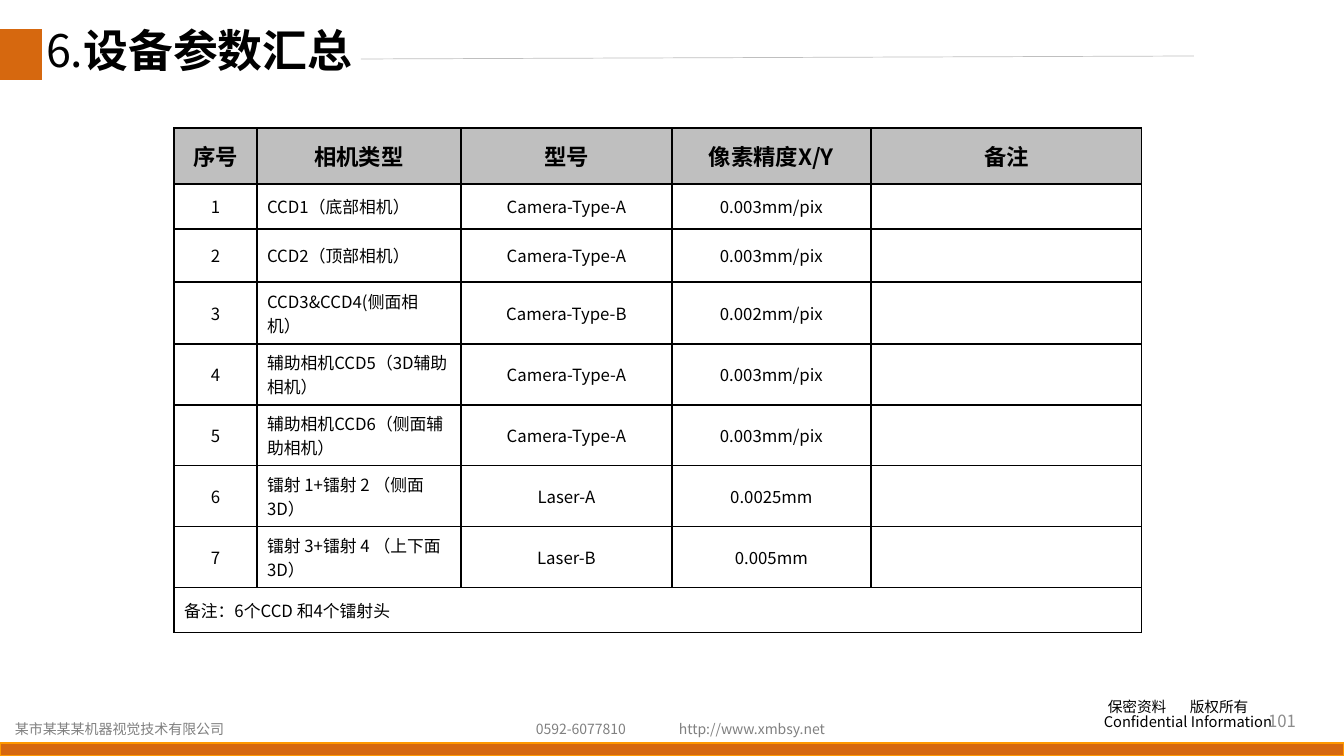
from pptx import Presentation
from pptx.dml.color import RGBColor
from pptx.enum.shapes import MSO_CONNECTOR, MSO_SHAPE
from pptx.enum.text import MSO_ANCHOR, MSO_AUTO_SIZE, PP_ALIGN
from pptx.oxml.ns import qn
from pptx.util import Pt
from lxml import etree

RECT = MSO_SHAPE.RECTANGLE
STRAIGHT = MSO_CONNECTOR.STRAIGHT
TOP, MIDDLE = MSO_ANCHOR.TOP, MSO_ANCHOR.MIDDLE
NO_FIT = MSO_AUTO_SIZE.NONE
LEFT, CENTER, RIGHT = PP_ALIGN.LEFT, PP_ALIGN.CENTER, PP_ALIGN.RIGHT

SCALE = 914400 / 100.8
FONT = "Noto Sans CJK SC"
BLACK, GREY, ORANGE = "000000", "808080", "D6680F"

COLUMNS = [83, 204, 211, 199, 271]
ROWS = [56, 45, 53, 62, 61, 61, 61, 61, 45]
HEADERS = ["序号", "相机类型", "型号", "像素精度X/Y", "备注"]
DEVICES = [
    ["CCD1（底部相机）", "Camera-Type-A", "0.003mm/pix"],
    ["CCD2（顶部相机）", "Camera-Type-A", "0.003mm/pix"],
    ["CCD3&CCD4(侧面相机）", "Camera-Type-B", "0.002mm/pix"],
    ["辅助相机CCD5（3D辅助相机）", "Camera-Type-A", "0.003mm/pix"],
    ["辅助相机CCD6（侧面辅助相机）", "Camera-Type-A", "0.003mm/pix"],
    ["镭射 1+镭射 2 （侧面3D）", "Laser-A", "0.0025mm"],
    ["镭射 3+镭射 4 （上下面3D）", "Laser-B", "0.005mm"],
]
REMARK = "备注：6个CCD 和4个镭射头"


def px(n):
    return round(n * SCALE)


def color(value):
    return RGBColor.from_string(value)


def format_run(r, size, fill=BLACK, bold=False):
    r.font.size = Pt(size)
    r.font.bold = bold
    r.font.name = FONT
    r.font.color.rgb = color(fill)
    rPr = r.font._element
    ea = etree.Element(qn("a:ea"), typeface=FONT)
    rPr.find(qn("a:latin")).addnext(ea)


def add_text(s, x, y, w, h, text, size, fill=BLACK, align=LEFT, anchor=TOP, wrap=False):
    sp = s.shapes.add_textbox(px(x), px(y), px(w), px(h))
    tf = sp.text_frame
    tf.word_wrap = wrap
    tf.vertical_anchor = anchor
    tf.text = text
    for p in tf.paragraphs:
        p.alignment = align
        for r in p.runs:
            format_run(r, size, fill)
    return tf


def add_bar(s, x, y, w, h, line=None):
    sp = s.shapes.add_shape(RECT, px(x), px(y), px(w), px(h))
    sp.shadow.inherit = False
    sp.fill.solid()
    sp.fill.fore_color.rgb = color(ORANGE)
    if line:
        sp.line.color.rgb = color(line)
        sp.line.width = Pt(1)
    else:
        sp.line.fill.background()


def add_header(s, x, y, w, h):
    add_bar(s, x, y, 42, h)
    rule = s.shapes.add_connector(STRAIGHT, px(x + 361), px(y + 30), px(x + w), px(y + 27))
    rule.line.color.rgb = color("BFBFBF")
    rule.line.width = Pt(0.5)
    etree.SubElement(rule._element.spPr, qn("a:effectLst"))

    title = s.shapes.title
    title.left, title.top, title.width, title.height = px(x + 36), px(y), px(384), px(72)
    tf = title.text_frame
    tf.auto_size = NO_FIT
    tf.vertical_anchor = TOP
    tf.margin_top = 0
    p = tf.paragraphs[0]
    p.alignment = LEFT
    p.line_spacing = 0.9
    for text, bold in [("6.", False), ("设备参数汇总", True)]:
        r = p.add_run()
        r.text = text
        format_run(r, 32, bold=bold)


def add_borders(cell):
    tcPr = cell._tc.get_or_add_tcPr()
    for i, side in enumerate(["lnL", "lnR", "lnT", "lnB"]):
        ln = etree.Element(qn(f"a:{side}"), w=str(Pt(1)))
        fill = etree.SubElement(ln, qn("a:solidFill"))
        etree.SubElement(fill, qn("a:srgbClr"), val=BLACK)
        tcPr.insert(i, ln)


def fill_cell(cell, text, size, align, bold=False, fill=None):
    cell.vertical_anchor = MIDDLE
    if fill:
        cell.fill.solid()
        cell.fill.fore_color.rgb = color(fill)
    else:
        cell.fill.background()
    add_borders(cell)
    p = cell.text_frame.paragraphs[0]
    p.text = text
    p.alignment = align
    for r in p.runs:
        format_run(r, size, bold=bold)
    if not text:
        etree.SubElement(p._p, qn("a:endParaRPr"), sz=str(size * 100))


def add_device_table(s, x, y):
    frame = s.shapes.add_table(len(ROWS), len(COLUMNS), px(x), px(y), px(sum(COLUMNS)), px(sum(ROWS)))
    table = frame.table
    for column, width in zip(table.columns, COLUMNS):
        column.width = px(width)
    for row, height in zip(table.rows, ROWS):
        row.height = px(height)
    for j, text in enumerate(HEADERS):
        fill_cell(table.cell(0, j), text, 16, CENTER, True, "BFBFBF")
    for i, device in enumerate(DEVICES, 1):
        for j, text in enumerate([str(i), *device, ""]):
            fill_cell(table.cell(i, j), text, 12, LEFT if j == 1 else CENTER)
    last = len(ROWS) - 1
    for j in range(len(COLUMNS)):
        fill_cell(table.cell(last, j), "" if j else REMARK, 12, LEFT)
    table.cell(last, 0).merge(table.cell(last, len(COLUMNS) - 1))


def add_footer(s, x, y, w, h):
    add_bar(s, x, y + h - 13, w, 13, "FF9900")
    for left, width, text in [
        (5, 237, "某市某某某机器视觉技术有限公司"),
        (526, 111, "0592-6077810"),
        (669, 168, "http://www.xmbsy.net"),
    ]:
        add_text(s, x + left, y + 20, width, 27, text, 10, GREY)

    notice = add_text(s, x + 1094, y, 219, 45, "保密资料\t版权所有\nConfidential Information", 10.5)
    for p in notice.paragraphs:
        p.line_spacing = 0.85
    pPr = notice.paragraphs[0]._p.get_or_add_pPr()
    pPr.set("marL", str(px(4)))
    tabs = etree.SubElement(pPr, qn("a:tabLst"))
    etree.SubElement(tabs, qn("a:tab"), pos=str(px(82)), algn="l")
    add_text(s, x + 1004, y + 5, 302, 40, "101", 12, "8C8C8C", RIGHT, MIDDLE, True)


def main():
    prs = Presentation()
    prs.slide_width, prs.slide_height = px(1344), px(756)
    s = prs.slides.add_slide(prs.slide_layouts[5])
    add_header(s, 0, 29, 1194, 51)
    add_device_table(s, 174, 128)
    add_footer(s, 0, 696, 1344, 60)
    prs.save("out.pptx")


if __name__ == "__main__":
    main()
